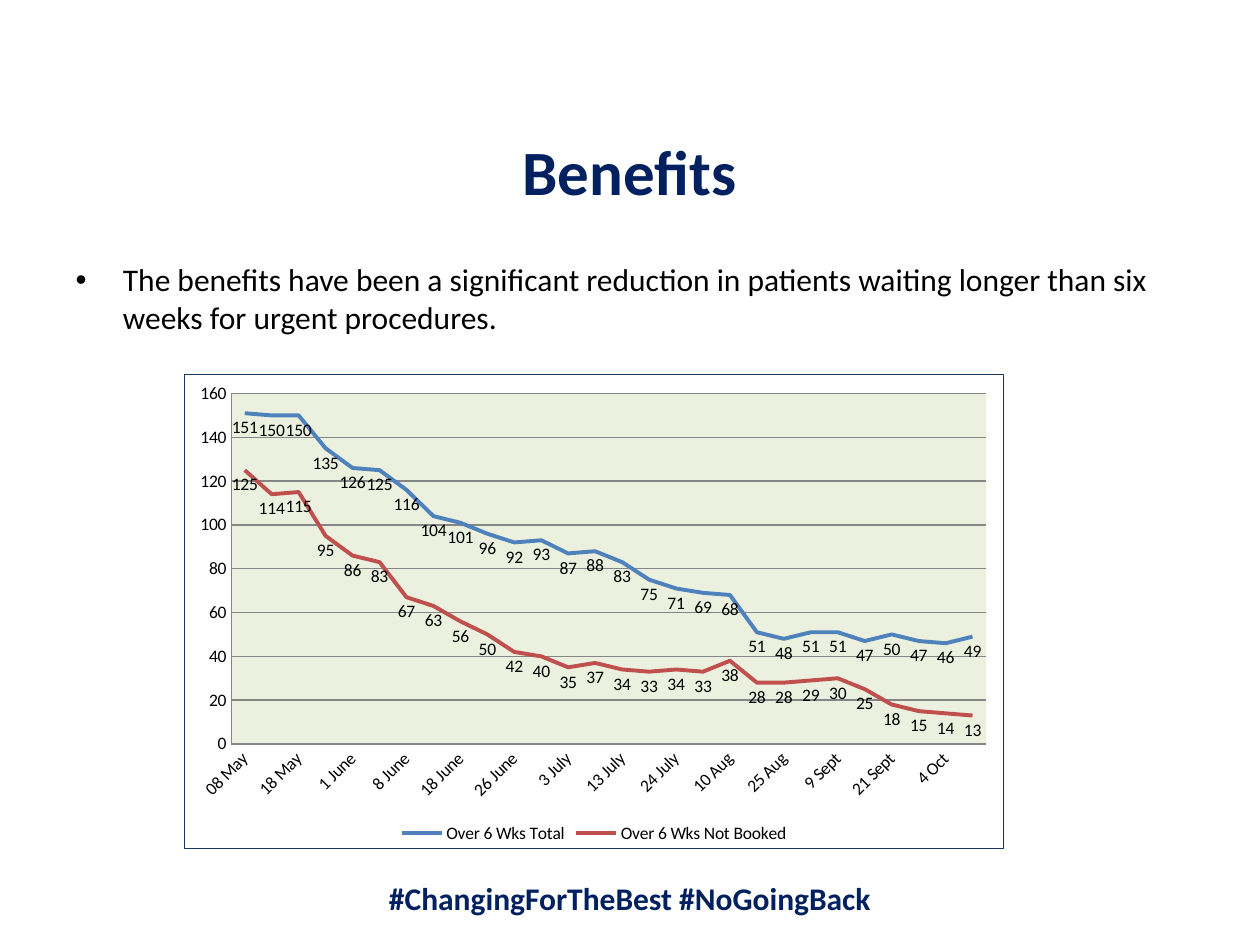
from lxml.etree import SubElement
from pptx import Presentation
from pptx.chart.data import CategoryChartData
from pptx.dml.color import RGBColor
from pptx.enum.chart import XL_CHART_TYPE as ChartType
from pptx.enum.chart import XL_LABEL_POSITION as LabelPos
from pptx.enum.chart import XL_LEGEND_POSITION as LegendPos
from pptx.enum.chart import XL_TICK_MARK as Tick
from pptx.enum.text import MSO_ANCHOR as Anchor
from pptx.enum.text import MSO_AUTO_SIZE as AutoSize
from pptx.enum.text import PP_ALIGN as Align
from pptx.oxml import parse_xml
from pptx.oxml.ns import nsdecls, qn
from pptx.util import Emu, Pt

PX_PER_INCH = 126
FONT = "Calibri"
NAVY, BLACK, GRID = "002060", "000000", "868686"
PLOT_FILL, BORDER = "EBF1DE", "17375E"

DATES = [
    "08 May", "14 May", "18 May", "25 May", "1 June", "4 June", "8 June",
    "12 June", "18 June", "23 June", "26 June", "29 June", "3 July", "6 July",
    "13 July", "20 July", "24 July", "29 July", "10 Aug", "18 Aug", "25 Aug",
    "1 Sept", "9 Sept", "16 Sept", "21 Sept", "28 Sept", "4 Oct", "15 Oct",
]
WAITS = [
    ("Over 6 Wks Total", "4F81BD",
     [151, 150, 150, 135, 126, 125, 116, 104, 101, 96, 92, 93, 87, 88,
      83, 75, 71, 69, 68, 51, 48, 51, 51, 47, 50, 47, 46, 49]),
    ("Over 6 Wks Not Booked", "C0504D",
     [125, 114, 115, 95, 86, 83, 67, 63, 56, 50, 42, 40, 35, 37,
      34, 33, 34, 33, 38, 28, 28, 29, 30, 25, 18, 15, 14, 13]),
]


def px(length):
    return Emu(round(length * 914400 / PX_PER_INCH))


def rgb(color):
    return RGBColor.from_string(color)


def style_font(font, size, color, bold=False):
    font.name, font.size, font.bold = FONT, Pt(size), bold
    font.color.rgb = rgb(color)


def write(shape, box, text, size, color, bold=False, align=Align.LEFT,
          anchor=Anchor.MIDDLE):
    """Place a text shape in the box and fill it with one formatted run."""
    shape.left, shape.top, shape.width, shape.height = map(px, box)
    frame = shape.text_frame
    frame.word_wrap = True
    frame.auto_size = AutoSize.NONE
    frame.vertical_anchor = anchor
    paragraph = frame.paragraphs[0]
    paragraph.alignment = align
    paragraph.space_before = Pt(0)
    run = paragraph.add_run()
    run.text = text
    style_font(run.font, size, color, bold)


def area_format(tag_fill, line=""):
    return parse_xml(f'<c:spPr {nsdecls("c", "a")}>{solid(tag_fill)}{line}</c:spPr>')


def solid(color):
    return f'<a:solidFill><a:srgbClr val="{color}"/></a:solidFill>'


def format_axes(chart):
    dates, counts = chart.category_axis, chart.value_axis
    for axis in (dates, counts):
        axis.major_tick_mark = axis.minor_tick_mark = Tick.NONE
        axis.format.line.color.rgb = rgb(GRID)
        style_font(axis.tick_labels.font, 10, BLACK)
    dates.has_major_gridlines = False
    counts.minimum_scale, counts.maximum_scale, counts.major_unit = 0, 160, 20
    counts.has_major_gridlines = True
    counts.major_gridlines.format.line.color.rgb = rgb(GRID)

    date_xml = chart._chartSpace.find(".//" + qn("c:catAx"))
    date_xml.find(".//" + qn("a:bodyPr")).set("rot", "-2700000")
    skip = parse_xml(f'<c:tickLblSkip {nsdecls("c")} val="2"/>')
    date_xml.find(qn("c:noMultiLvlLbl")).addprevious(skip)


def format_areas(chart):
    """Fill and position the plot area, and outline the whole chart."""
    space = chart._chartSpace
    plot_area = space.chart.plotArea
    plot_area.append(area_format(PLOT_FILL))
    layout = plot_area.find(qn("c:layout"))
    if layout is None:
        layout = parse_xml(f'<c:layout {nsdecls("c")}/>')
        plot_area.insert(0, layout)
    manual = SubElement(layout, qn("c:manualLayout"))
    for tag, value in (("layoutTarget", "inner"), ("xMode", "edge"),
                       ("yMode", "edge"), ("x", "0.057"), ("y", "0.04"),
                       ("w", "0.922"), ("h", "0.74")):
        SubElement(manual, qn("c:" + tag)).set("val", value)
    outline = f'<a:ln w="{Pt(0.75)}">{solid(BORDER)}</a:ln>'
    space.chart.addnext(area_format("FFFFFF", outline))


def add_waits_chart(slide, box):
    data = CategoryChartData()
    data.categories = DATES
    for name, _, values in WAITS:
        data.add_series(name, values)
    chart = slide.shapes.add_chart(ChartType.LINE, *map(px, box), data).chart
    style_font(chart.font, 10, BLACK)
    chart.has_title = False
    chart.has_legend = True
    chart.legend.position = LegendPos.BOTTOM
    chart.legend.include_in_layout = False
    style_font(chart.legend.font, 10, BLACK)
    plot = chart.plots[0]
    plot.vary_by_categories = False
    for series, (_, color, _) in zip(plot.series, WAITS):
        series.smooth = False
        series.format.line.color.rgb = rgb(color)
        series.format.line.width = Pt(2.25)
        labels = series.data_labels
        labels.show_value = True
        labels.position = LabelPos.BELOW
        style_font(labels.font, 10, BLACK)
    format_axes(chart)
    format_areas(chart)


def add_benefits_slide(deck):
    slide = deck.slides.add_slide(deck.slide_layouts[1])
    title, reduction = slide.placeholders
    write(title, (63, 132, 1133, 77), "Benefits", 36, NAVY, True, Align.CENTER)
    write(reduction, (63, 254, 1134, 92),
          "The benefits have been a significant reduction in patients waiting "
          "longer than six weeks for urgent procedures.",
          18, BLACK, anchor=Anchor.TOP)
    add_waits_chart(slide, (184, 374, 820, 475))
    hashtags = slide.shapes.add_textbox(0, 0, 0, 0)
    write(hashtags, (63, 869, 1134, 57), "#ChangingForTheBest #NoGoingBack",
          18, NAVY, True, Align.CENTER)


def main():
    deck = Presentation()
    deck.slide_width, deck.slide_height = px(1260), px(945)
    add_benefits_slide(deck)
    deck.save("out.pptx")


if __name__ == "__main__":
    main()
